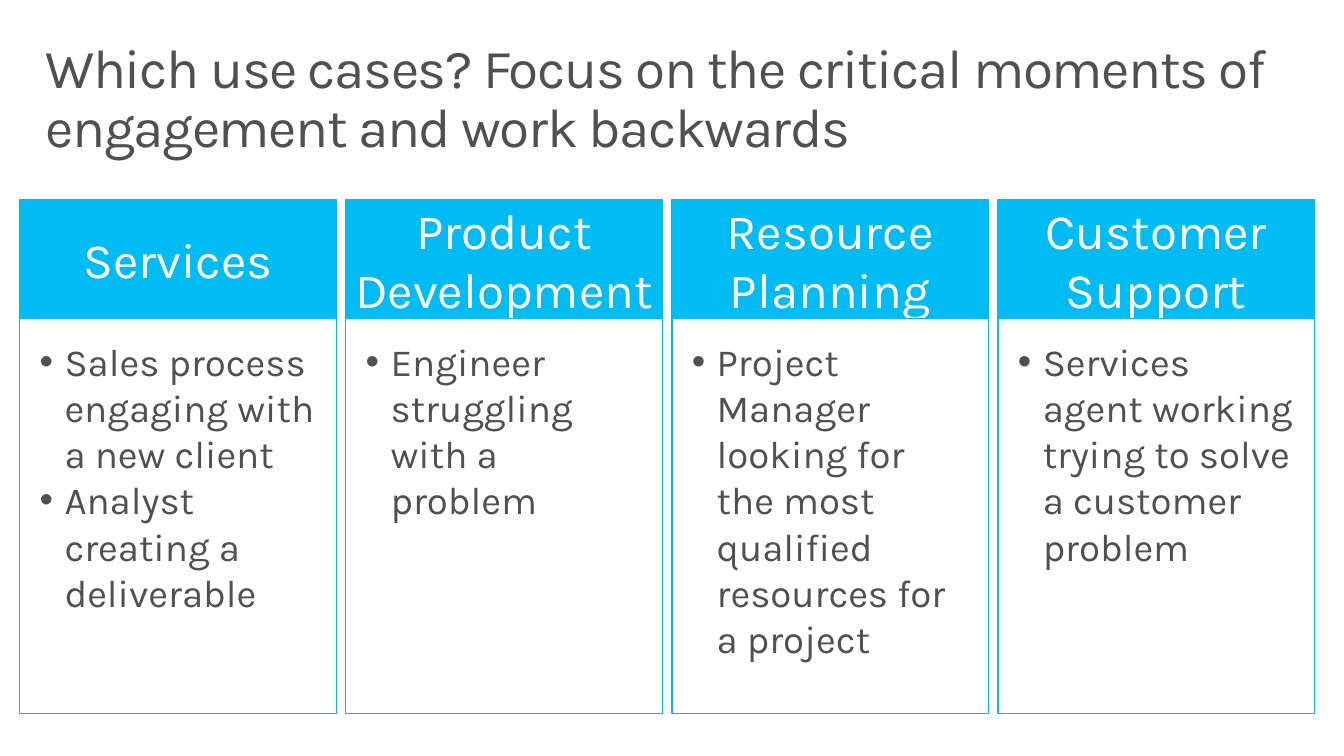
from lxml import etree
from pptx import Presentation
from pptx.dml.color import RGBColor
from pptx.enum.shapes import MSO_SHAPE as Shape
from pptx.enum.text import MSO_ANCHOR as Anchor, PP_ALIGN as Align
from pptx.oxml.ns import qn
from pptx.util import Cm, Pt

SKY, GREY, WHITE = "00BCF2", "505050", "FFFFFF"
LEFT, TOP, WIDTH, PITCH = 0.51, 5.13, 8.13, 8.38
HEADER_HEIGHT, BODY_HEIGHT = 3.05, 10.16
INDENT = Cm(0.64)

USE_CASES = [
    ("Services", ["Sales process engaging with a new client",
                  "Analyst creating a deliverable"]),
    ("Product Development", ["Engineer struggling with a problem"]),
    ("Resource Planning", ["Project Manager looking for the most qualified "
                           "resources for a project"]),
    ("Customer Support", ["Services agent working trying to solve "
                          "a customer problem"]),
]


def rgb(color):
    return RGBColor.from_string(color)


def write(box, text, size, color=GREY, align=Align.LEFT, anchor=Anchor.TOP,
          margins=(0.51, 0.51), bullet=False, line_spacing=None, tracking=None):
    """Fill a box with one paragraph per line; margins are (side, top) in cm."""
    frame = box.text_frame
    frame.word_wrap = True
    frame.vertical_anchor = anchor
    frame.margin_left = frame.margin_right = Cm(margins[0])
    frame.margin_top = frame.margin_bottom = Cm(margins[1])
    frame.text = text
    for para in frame.paragraphs:
        para.alignment = align
        para.line_spacing = line_spacing
        if bullet:
            props = para._p.get_or_add_pPr()
            props.set("marL", str(INDENT))
            props.set("indent", str(-INDENT))
            etree.SubElement(props, qn("a:buFont"), typeface="Arial")
            etree.SubElement(props, qn("a:buChar"), char="•")
        for span in para.runs:
            span.font.name = "Karla"
            span.font.size = Pt(size)
            span.font.color.rgb = rgb(color)
            if tracking is not None:
                span._r.get_or_add_rPr().set("spc", str(tracking))


deck = Presentation()
deck.slide_width, deck.slide_height = Cm(34.54), Cm(19.43)
page = deck.slides.add_slide(deck.slide_layouts[6])

title = page.shapes.add_textbox(Cm(0.76), Cm(0.81), Cm(33.02), Cm(2.54))
write(title, "Which use cases? Focus on the critical moments of engagement "
      "and work backwards", 40, margins=(0.41, 0.25), line_spacing=0.9,
      tracking=-100)

for column, (heading, moments) in enumerate(USE_CASES):
    card = page.shapes.add_group_shape()
    left = Cm(LEFT + column * PITCH)
    header = card.shapes.add_shape(Shape.RECTANGLE, left, Cm(TOP),
                                   Cm(WIDTH), Cm(HEADER_HEIGHT))
    body = card.shapes.add_shape(Shape.RECTANGLE, left, Cm(TOP + HEADER_HEIGHT),
                                 Cm(WIDTH), Cm(BODY_HEIGHT))
    for box, fill in ((header, SKY), (body, WHITE)):
        box.shadow.inherit = False
        box.fill.solid()
        box.fill.fore_color.rgb = rgb(fill)
        box.line.color.rgb = rgb(SKY)
        box.line.width = Pt(0.85)
    write(header, heading, 36, WHITE, align=Align.CENTER, anchor=Anchor.MIDDLE,
          margins=(0, 0.13))
    write(body, "\n".join(moments), 28, bullet=True)

deck.save("out.pptx")
